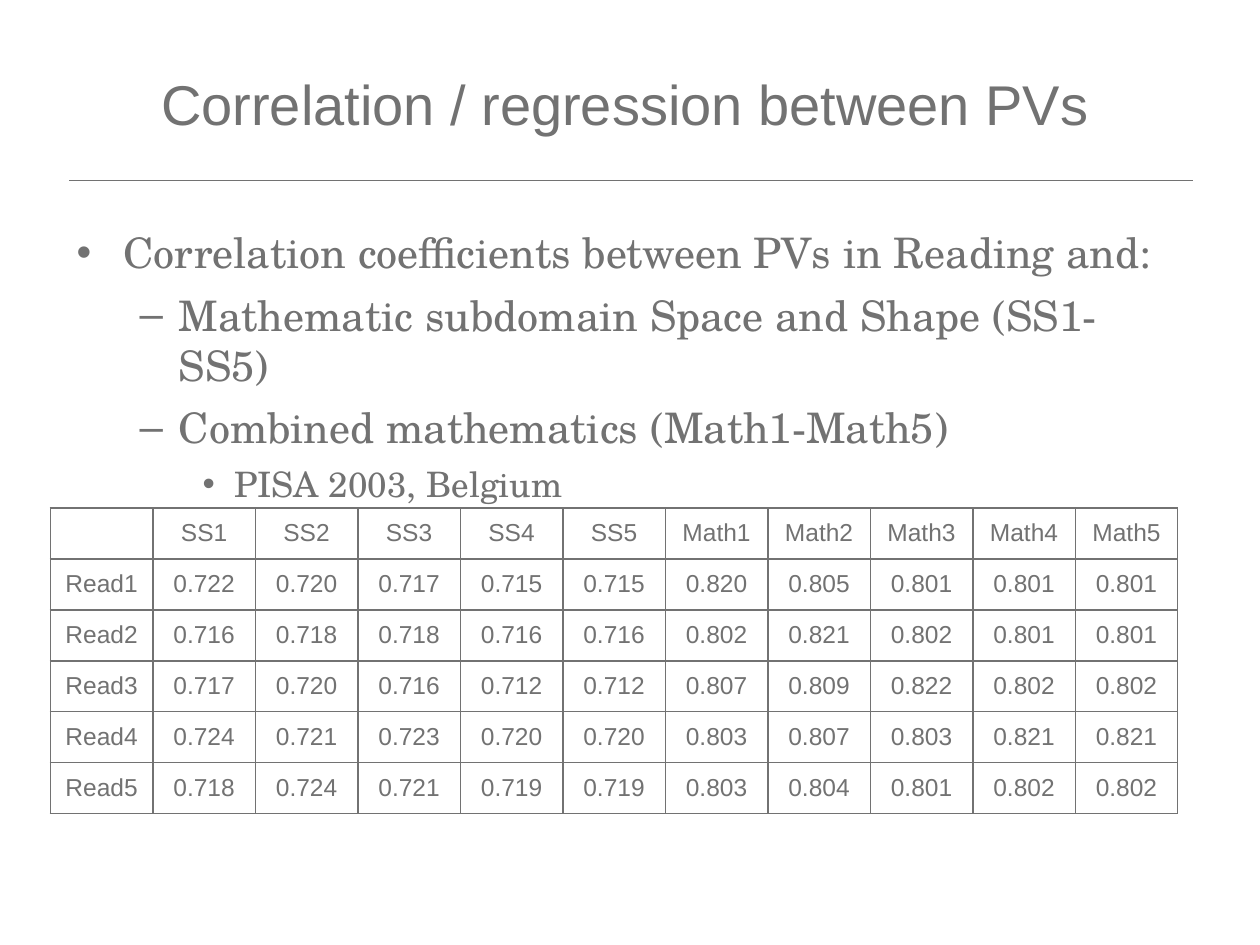
from lxml.etree import SubElement
from pptx import Presentation
from pptx.dml.color import RGBColor
from pptx.enum.shapes import MSO_CONNECTOR
from pptx.enum.text import MSO_ANCHOR, PP_ALIGN
from pptx.oxml.ns import qn
from pptx.util import Inches, Pt

GREY = RGBColor(0x72, 0x72, 0x72)
SANS = "Arial"
SERIF = "TeX Gyre Schola"

TITLE = "Correlation / regression between PVs"
# text, level, text indent, bullet hang, bullet, size, space before
POINTS = [
    ("Correlation coefficients between PVs in Reading and:", 0, 0.37, 0.37, "•", 24, 0),
    ("Mathematic subdomain Space and Shape (SS1-SS5)", 1, 0.81, 0.31, "–", 24, 6.8),
    ("Combined mathematics (Math1-Math5)", 1, 0.81, 0.31, "–", 24, 6.8),
    ("PISA 2003, Belgium", 2, 1.25, 0.25, "•", 20, 5.8),
]
CORRELATIONS = [
    ["", "SS1", "SS2", "SS3", "SS4", "SS5", "Math1", "Math2", "Math3", "Math4", "Math5"],
    ["Read1", "0.722", "0.720", "0.717", "0.715", "0.715", "0.820", "0.805", "0.801", "0.801", "0.801"],
    ["Read2", "0.716", "0.718", "0.718", "0.716", "0.716", "0.802", "0.821", "0.802", "0.801", "0.801"],
    ["Read3", "0.717", "0.720", "0.716", "0.712", "0.712", "0.807", "0.809", "0.822", "0.802", "0.802"],
    ["Read4", "0.724", "0.721", "0.723", "0.720", "0.720", "0.803", "0.807", "0.803", "0.821", "0.821"],
    ["Read5", "0.718", "0.724", "0.721", "0.719", "0.719", "0.803", "0.804", "0.801", "0.802", "0.802"],
]


def style_font(font, name, size):
    font.name = name
    font.size = Pt(size)
    font.color.rgb = GREY


def add_title(slide, left, top, width, height):
    frame = slide.shapes.add_textbox(left, top, width, height).text_frame
    frame.word_wrap = True
    frame.vertical_anchor = MSO_ANCHOR.MIDDLE
    frame.text = TITLE
    style_font(frame.paragraphs[0].runs[0].font, SANS, 32)


def add_title_rule(slide, left, top, width):
    rule = slide.shapes.add_connector(MSO_CONNECTOR.STRAIGHT, left, top, left + width, top)
    rule.line.color.rgb = GREY
    rule.line.width = Pt(0.5)
    SubElement(rule._element.spPr, qn("a:effectLst"))


def set_bullet(paragraph, symbol, indent, hang):
    properties = paragraph._p.get_or_add_pPr()
    properties.set("marL", str(Inches(indent)))
    properties.set("indent", str(-Inches(hang)))
    colour = SubElement(properties, qn("a:buClr"))
    SubElement(colour, qn("a:srgbClr"), val=str(GREY))
    SubElement(properties, qn("a:buFont"), typeface=SANS)
    SubElement(properties, qn("a:buChar"), char=symbol)


def add_points(slide, left, top, width, height):
    frame = slide.shapes.add_textbox(left, top, width, height).text_frame
    frame.word_wrap = True
    for index, (text, level, indent, hang, symbol, size, space) in enumerate(POINTS):
        point = frame.add_paragraph() if index else frame.paragraphs[0]
        point.text = text
        point.level = level
        set_bullet(point, symbol, indent, hang)
        point.space_before = Pt(space)
        style_font(point.runs[0].font, SERIF, size)


def set_borders(cell):
    """Draw a thin grey line on all four sides, ahead of the cell's fill."""
    properties = cell._tc.get_or_add_tcPr()
    for position, side in enumerate(("a:lnL", "a:lnR", "a:lnT", "a:lnB")):
        border = SubElement(properties, qn(side), w=str(Pt(1)))
        fill = SubElement(border, qn("a:solidFill"))
        SubElement(fill, qn("a:srgbClr"), val=str(GREY))
        properties.insert(position, border)


def add_correlation_table(slide, left, top, width, height):
    row_count, column_count = len(CORRELATIONS), len(CORRELATIONS[0])
    table = slide.shapes.add_table(row_count, column_count, left, top, width, height).table
    table.first_row = False
    table.horz_banding = False
    for row, values in enumerate(CORRELATIONS):
        for column, value in enumerate(values):
            cell = table.cell(row, column)
            cell.fill.background()
            set_borders(cell)
            cell.vertical_anchor = MSO_ANCHOR.MIDDLE
            entry = cell.text_frame.paragraphs[0]
            entry.text = value
            entry.alignment = PP_ALIGN.CENTER
            style_font(entry.font, SANS, 14)
            for run in entry.runs:
                style_font(run.font, SANS, 14)


def main():
    deck = Presentation()
    deck.slide_width, deck.slide_height = Inches(10), Inches(7.5)
    slide = deck.slides.add_slide(deck.slide_layouts[6])
    add_title_rule(slide, Inches(0.55), Inches(1.43), Inches(8.92))
    add_correlation_table(slide, Inches(0.4), Inches(4.03), Inches(8.95), Inches(2.43))
    add_title(slide, Inches(1.18), Inches(0.26), Inches(8.11), Inches(1.12))
    add_points(slide, Inches(0.51), Inches(1.75), Inches(8.99), Inches(1.92))
    deck.save("out.pptx")


if __name__ == "__main__":
    main()
